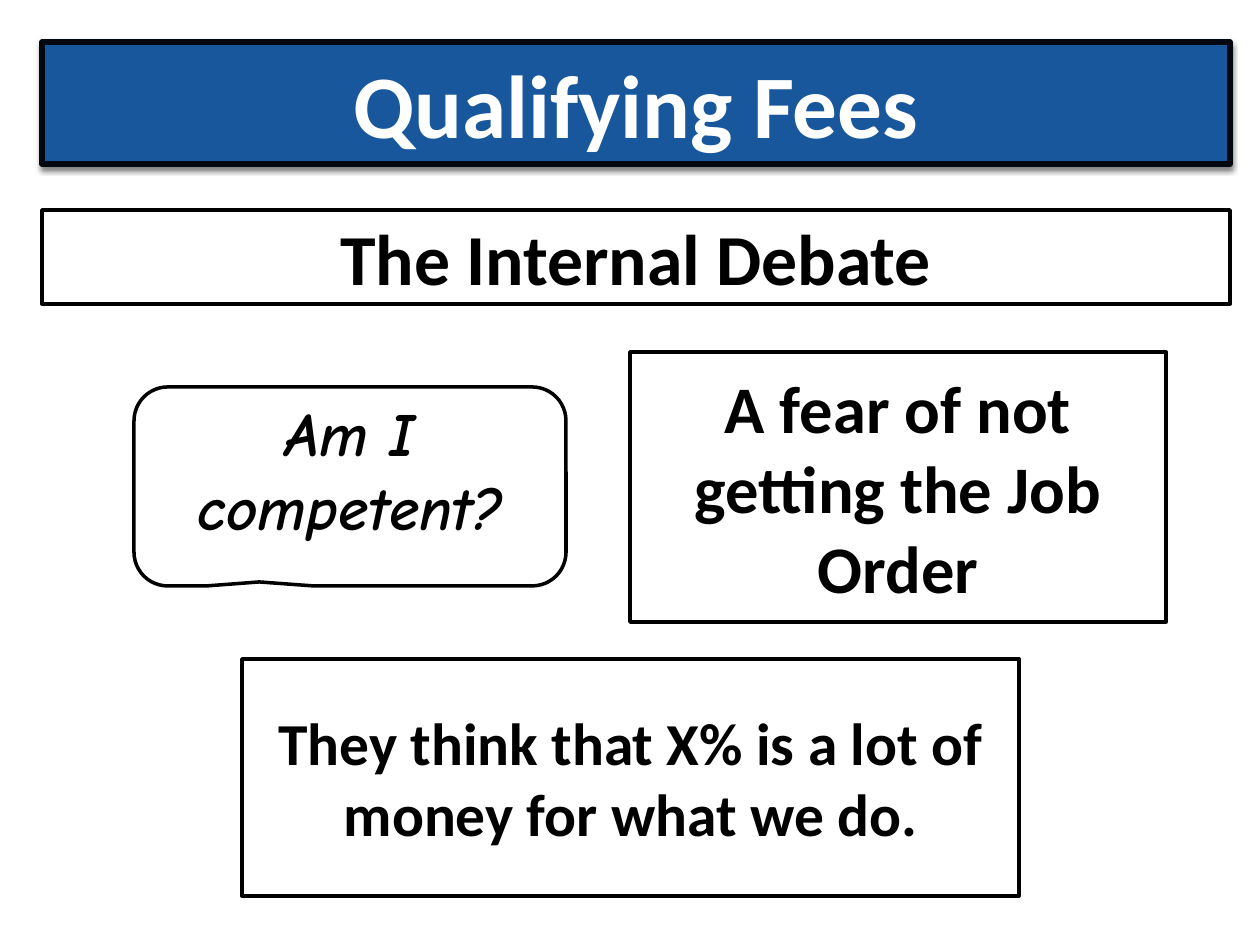
from dataclasses import dataclass

from lxml.etree import SubElement
from pptx import Presentation
from pptx.dml.color import RGBColor
from pptx.enum.shapes import MSO_SHAPE
from pptx.enum.text import MSO_ANCHOR, MSO_AUTO_SIZE, PP_ALIGN
from pptx.oxml.ns import qn
from pptx.util import Emu, Pt

EMU_PER_PX = 914400 / 126


@dataclass(frozen=True)
class Theme:
    """Colours, fonts and type sizes of the slide."""
    banner: str = "18579B"
    banner_line: str = "02080F"
    paper: str = "FFFFFF"
    ink: str = "000000"
    body_font: str = "Calibri"
    thought_font: str = "Comic Neue"
    title_size: int = 51
    subtitle_size: int = 41
    fear_size: int = 38
    thought_size: int = 35
    opinion_size: int = 34


THEME = Theme()


def px(length):
    """Turn whole pixels into EMU."""
    return Emu(round(length * EMU_PER_PX))


def paint(shape, fill, line, width):
    """Give a shape its solid fill and outline."""
    shape.fill.solid()
    shape.fill.fore_color.rgb = RGBColor.from_string(fill)
    shape.line.color.rgb = RGBColor.from_string(line)
    shape.line.width = Pt(width)


def write(shape, text, size, color=THEME.ink, font=THEME.body_font, italic=False):
    """Write one centred bold run into a shape."""
    frame = shape.text_frame
    frame.word_wrap = True
    frame.auto_size = MSO_AUTO_SIZE.NONE
    frame.vertical_anchor = MSO_ANCHOR.MIDDLE
    para = frame.paragraphs[0]
    para.alignment = PP_ALIGN.CENTER
    span = para.add_run()
    span.text = text
    span.font.name = font
    span.font.size = Pt(size)
    span.font.bold = True
    span.font.italic = italic
    span.font.color.rgb = RGBColor.from_string(color)


def add_drop_shadow(shape):
    """Cast a soft half-transparent shadow straight down."""
    effects = SubElement(shape.element.spPr, qn("a:effectLst"))
    shadow = SubElement(effects, qn("a:outerShdw"), blurRad=str(Pt(3)),
                        dist=str(Pt(2)), dir="5400000", rotWithShape="0")
    color = SubElement(shadow, qn("a:srgbClr"), val=THEME.ink)
    SubElement(color, qn("a:alpha"), val="50000")


def add_banner(page, box, text):
    """Turn the title placeholder into the blue banner."""
    title = page.shapes.title
    title.left, title.top, title.width, title.height = map(px, box)
    paint(title, THEME.banner, THEME.banner_line, 3)
    add_drop_shadow(title)
    write(title, text, THEME.title_size, THEME.paper)


def add_panel(page, box, text, size, kind=MSO_SHAPE.RECTANGLE, **style):
    """Add a white outlined shape with centred text."""
    panel = page.shapes.add_shape(kind, *map(px, box))
    panel.shadow.inherit = False
    paint(panel, THEME.paper, THEME.ink, 2)
    write(panel, text, size, **style)
    return panel


def add_thought(page, box, text):
    """Add the speech callout with its text raised above the middle."""
    callout = add_panel(page, box, text, THEME.thought_size,
                        MSO_SHAPE.ROUNDED_RECTANGULAR_CALLOUT,
                        font=THEME.thought_font, italic=True)
    for index, value in enumerate((-0.21, 0.48, 0.17)):
        callout.adjustments[index] = value
    callout.text_frame.margin_bottom = px(41)


def main():
    """Build and save the slide."""
    deck = Presentation()
    deck.slide_width, deck.slide_height = px(1260), px(945)
    page = deck.slides.add_slide(deck.slide_layouts.get_by_name("Title Only"))
    add_banner(page, (42, 42, 1188, 122), "Qualifying Fees")
    add_panel(page, (42, 210, 1188, 94), "The Internal Debate", THEME.subtitle_size)
    add_thought(page, (134, 387, 432, 199), "Am I competent?")
    add_panel(page, (630, 352, 536, 270), "A fear of not getting the Job Order",
              THEME.fear_size)
    add_panel(page, (242, 659, 777, 237),
              "They think that X% is a lot of money for what we do.",
              THEME.opinion_size)
    deck.save("out.pptx")


if __name__ == "__main__":
    main()
